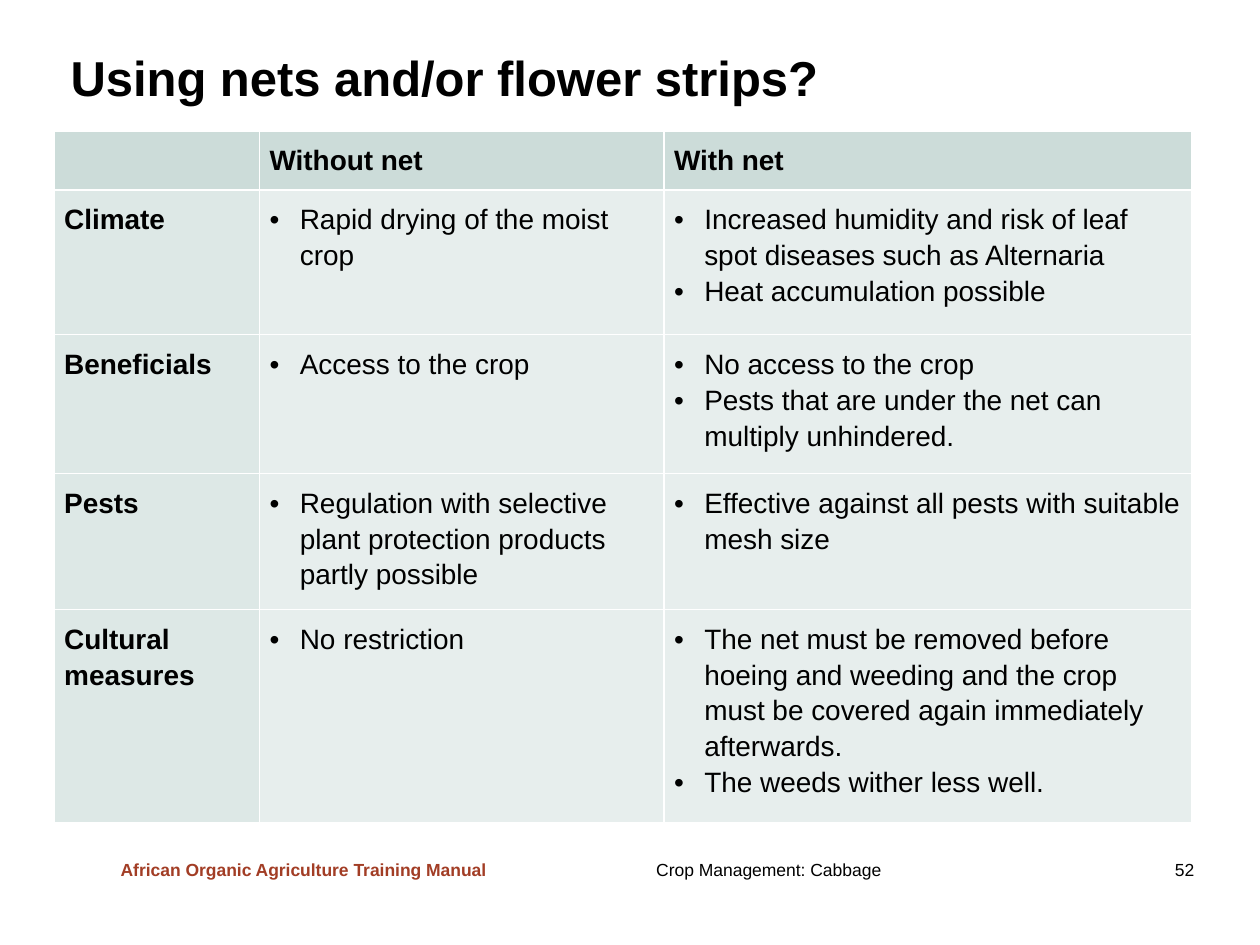
from lxml import etree
from pptx import Presentation
from pptx.dml.color import RGBColor
from pptx.enum.text import MSO_ANCHOR
from pptx.oxml.ns import qn
from pptx.util import Inches, Pt

BLACK, WHITE, RUST = "000000", "FFFFFF", "A23D25"
HEADER_FILL, LABEL_FILL, BODY_FILL = "CCDCD9", "DDE8E6", "E7EEED"
COLUMN_WIDTHS = (1.63, 3.21, 4.19)
ROW_HEIGHTS = (0.33, 1.15, 1.1, 1.02, 1.64)
HEADINGS = ("", "Without net", "With net")
COMPARISON = (
    ("Climate", ["Rapid drying of the moist crop"],
     ["Increased humidity and risk of leaf spot diseases such as Alternaria",
      "Heat accumulation possible"]),
    ("Beneficials", ["Access to the crop"],
     ["No access to the crop",
      "Pests that are under the net can multiply unhindered."]),
    ("Pests", ["Regulation with selective plant protection products partly possible"],
     ["Effective against all pests with suitable mesh size"]),
    ("Cultural measures", ["No restriction"],
     ["The net must be removed before hoeing and weeding and the crop must be "
      "covered again immediately afterwards.",
      "The weeds wither less well."]),
)


def color(value):
    return RGBColor.from_string(value)


def set_all(target, values):
    for name, value in values.items():
        setattr(target, name, value)


def style_font(font, size, bold=False, fill=BLACK):
    set_all(font, {"name": "Arial", "size": Pt(size), "bold": bold})
    font.color.rgb = color(fill)


def add_text(page, box, text, size, bold=False, fill=BLACK, tab=None, **frame_format):
    shape = page.shapes.add_textbox(*(Inches(length) for length in box))
    frame = shape.text_frame
    set_all(frame, {"word_wrap": True, **frame_format})
    para = frame.paragraphs[0]
    if tab is not None:
        tabs = etree.SubElement(para._p.get_or_add_pPr(), qn("a:tabLst"))
        etree.SubElement(tabs, qn("a:tab"), pos=str(Inches(tab)), algn="r")
    span = para.add_run()
    span.text = text
    style_font(span.font, size, bold, fill)


def add_bullet(para):
    props = para._p.get_or_add_pPr()
    props.set("marL", str(Inches(0.24)))
    props.set("indent", str(Inches(-0.24)))
    etree.SubElement(props, qn("a:buFont"), typeface="Arial")
    etree.SubElement(props, qn("a:buChar"), char="•")


def add_borders(cell):
    props = cell._tc.get_or_add_tcPr()
    for index, side in enumerate(("lnL", "lnR", "lnT", "lnB")):
        line = etree.Element(qn(f"a:{side}"), w=str(Pt(1)))
        fill = etree.SubElement(line, qn("a:solidFill"))
        etree.SubElement(fill, qn("a:srgbClr"), val=WHITE)
        props.insert(index, line)


def fill_cell(cell, lines, fill, bold=False, bullets=False, space_after=0):
    margins = ("margin_left", "margin_right", "margin_top", "margin_bottom")
    set_all(cell, {name: Inches(0.08) for name in margins})
    cell.fill.solid()
    cell.fill.fore_color.rgb = color(fill)
    add_borders(cell)
    frame = cell.text_frame
    for index, line in enumerate(lines):
        para = frame.add_paragraph() if index else frame.paragraphs[0]
        if bullets:
            add_bullet(para)
        set_all(para, {"line_spacing": 1.15, "space_after": Pt(space_after)})
        if line:
            span = para.add_run()
            span.text = line
            style_font(span.font, 16, bold)
        else:
            style_font(para.font, 16, bold)


def add_comparison(page, box):
    frame = page.shapes.add_table(len(ROW_HEIGHTS), len(COLUMN_WIDTHS),
                                  *(Inches(length) for length in box))
    table = frame.table
    set_all(table, {"first_row": False, "horz_banding": False})
    for column, width in zip(table.columns, COLUMN_WIDTHS):
        column.width = Inches(width)
    for row, height in zip(table.rows, ROW_HEIGHTS):
        row.height = Inches(height)

    # Heading row
    for cell, heading in zip(table.rows[0].cells, HEADINGS):
        fill_cell(cell, [heading], HEADER_FILL, bold=True, space_after=10 if heading else 0)

    # Topic label followed by two bulleted cells
    for row_index, (topic, *points) in enumerate(COMPARISON, start=1):
        fill_cell(table.cell(row_index, 0), [topic], LABEL_FILL, bold=True)
        for column_index, lines in enumerate(points, start=1):
            fill_cell(table.cell(row_index, column_index), lines, BODY_FILL, bullets=True)


def add_title(page, box):
    add_text(page, box, "Using nets and/or flower strips?", 28, bold=True,
             vertical_anchor=MSO_ANCHOR.MIDDLE, margin_left=0, margin_top=0)


def add_footer(page, box):
    left, top, width, height = box
    add_text(page, (left + 4.25, top, width - 4.25, height),
             "Crop Management: Cabbage\t52", 10, tab=4.27,
             vertical_anchor=MSO_ANCHOR.MIDDLE)
    add_text(page, (left, top, 3.14, height),
             "African Organic Agriculture Training Manual", 10,
             bold=True, fill=RUST, word_wrap=False)


def main():
    deck = Presentation()
    set_all(deck, {"slide_width": Inches(10), "slide_height": Inches(7.5)})
    page = deck.slides.add_slide(deck.slide_layouts[6])
    add_footer(page, (0.86, 6.77, 9.06, 0.27))
    add_title(page, (0.56, 0.36, 9.02, 0.55))
    add_comparison(page, (0.43, 1.04, 9.03, 5.43))
    deck.save("out.pptx")


if __name__ == "__main__":
    main()
